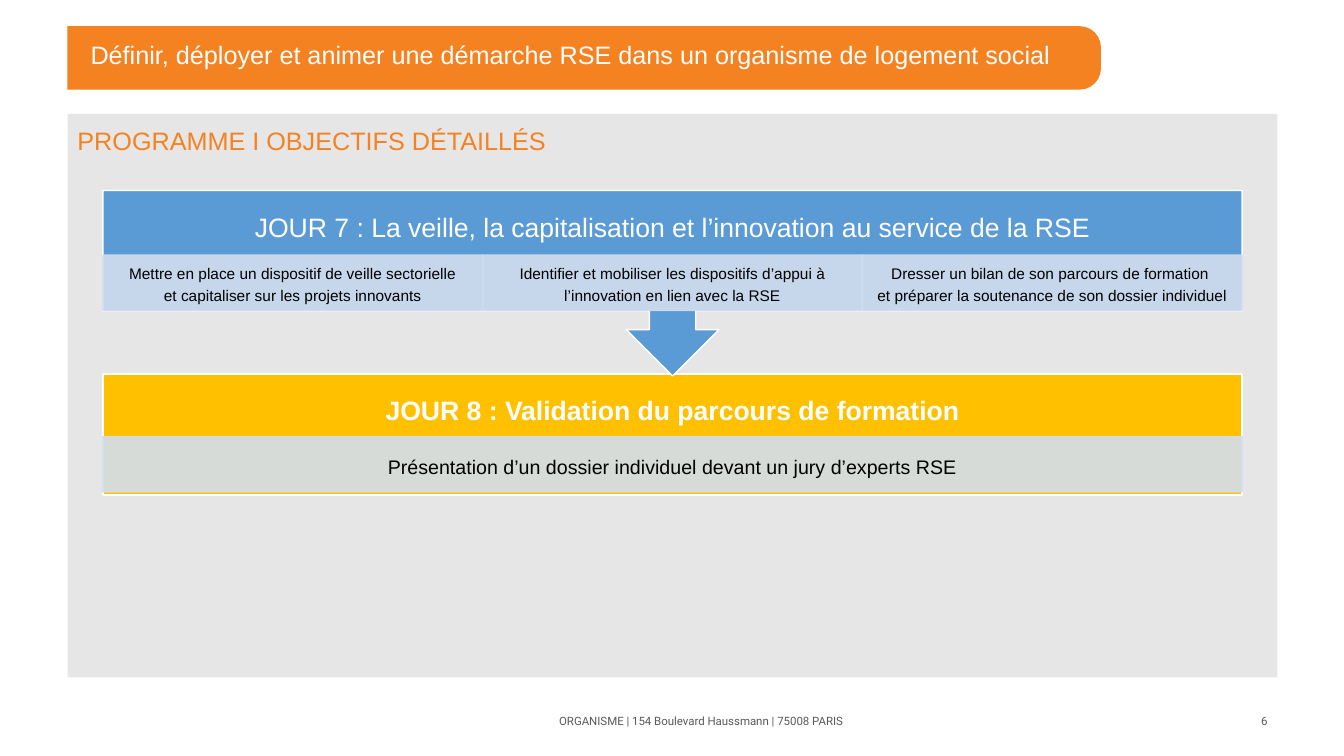
from lxml import etree
from pptx import Presentation
from pptx.dml.color import RGBColor
from pptx.enum import shapes, text
from pptx.oxml.ns import qn
from pptx.util import Inches, Pt

COLORS = {
    "orange": "F58221", "white": "FFFFFF", "gray": "E7E6E6", "footer": "58595B",
    "yellow": "FFC000", "blue": "5B9BD5", "pale": "D2DEEF", "black": "000000",
}
KIND = shapes.MSO_SHAPE
ALIGN = text.PP_ALIGN
BLOCK_LEFT, BLOCK_WIDTH = 1.02, 11.3
HEADING_HEIGHT, CELL_HEIGHT = 0.65, 0.55
DAY_7_TOP, DAY_8_TOP = 1.89, 3.71
DAY_7_GOALS = [
    "Mettre en place un dispositif de veille sectorielle\n"
    "et capitaliser sur les projets innovants",
    "Identifier et mobiliser les dispositifs d’appui à l’innovation en lien avec la RSE",
    "Dresser un bilan de son parcours de formation \n"
    "et préparer la soutenance de son dossier individuel",
]


def color(name):
    return RGBColor.from_string(COLORS[name])


def set_alpha(color_parent, percent):
    """Set the opacity of the solid colour inside a fill or line element."""
    rgb = color_parent.find(qn("a:solidFill")).find(qn("a:srgbClr"))
    etree.SubElement(rgb, qn("a:alpha")).set("val", str(percent * 1000))


def add_block(slide, kind, box, fill, line=None):
    shape = slide.shapes.add_shape(kind, *map(Inches, box))
    shape.shadow.inherit = False
    shape.fill.solid()
    shape.fill.fore_color.rgb = color(fill)
    if line:
        shape.line.color.rgb = color(line)
        shape.line.width = Pt(1)
    else:
        shape.line.fill.background()
    return shape


def write(shape, content, size, ink, align=ALIGN.CENTER, anchor=text.MSO_ANCHOR.MIDDLE,
          insets=(0.1, 0.05), spacing=1.2, font="Arial", bold=False):
    frame = shape.text_frame
    frame.word_wrap = True
    frame.vertical_anchor = anchor
    frame.margin_left = frame.margin_right = Inches(insets[0])
    frame.margin_top = frame.margin_bottom = Inches(insets[1])
    paragraph = frame.paragraphs[0]
    paragraph.alignment = align
    paragraph.line_spacing = spacing
    for number, line in enumerate(content.split("\n")):
        if number:
            paragraph.add_line_break()
        run = paragraph.add_run()
        run.text = line
        run.font.name = font
        run.font.size = Pt(size)
        run.font.bold = bold
        run.font.color.rgb = color(ink)


def add_label(slide, box, content, size, ink, **options):
    label = slide.shapes.add_textbox(*map(Inches, box))
    write(label, content, size, ink, **options)


def add_heading(slide, top, content, bold=False):
    add_label(slide, (BLOCK_LEFT, top, BLOCK_WIDTH, HEADING_HEIGHT), content, 19, "white",
              insets=(0.15, 0.15), bold=bold)


def add_cells(slide, top, contents, size, inset):
    """Share the block width equally between translucent cells."""
    width = BLOCK_WIDTH / len(contents)
    for column, content in enumerate(contents):
        box = (BLOCK_LEFT + column * width, top, width, CELL_HEIGHT)
        cell = add_block(slide, KIND.RECTANGLE, box, "pale", "pale")
        properties = cell.fill._xPr
        set_alpha(properties, 90)
        set_alpha(properties.find(qn("a:ln")), 90)
        write(cell, content, size, "black", insets=(inset, 0.02))


def add_footer(slide, box, content, align):
    add_label(slide, box, content, 8.2, "footer", align=align, spacing=1.0, font="Roboto")


def main():
    presentation = Presentation()
    presentation.slide_width, presentation.slide_height = Inches(13.33), Inches(7.5)
    slide = presentation.slides.add_slide(presentation.slide_layouts[6])

    # Title banner, squared off on the left by a white block
    banner = add_block(slide, KIND.ROUNDED_RECTANGLE, (0.09, 0.26, 10.83, 0.63), "orange")
    banner.adjustments[0] = 0.336
    add_block(slide, KIND.RECTANGLE, (0, 0.15, 0.67, 0.88), "white")
    add_label(slide, (0.8, 0.26, 9.9, 0.6),
              "Définir, déployer et animer une démarche RSE dans un organisme de logement social",
              18, "white", align=ALIGN.LEFT, spacing=0.9)

    # Programme panel
    panel = add_block(slide, KIND.RECTANGLE, (0.67, 1.13, 12, 5.59), "gray")
    write(panel, "PROGRAMME I OBJECTIFS DÉTAILLÉS", 18, "orange",
          align=ALIGN.LEFT, anchor=text.MSO_ANCHOR.TOP)

    # Day 8
    add_block(slide, KIND.RECTANGLE, (BLOCK_LEFT, DAY_8_TOP, BLOCK_WIDTH, 1.2),
              "yellow", "white")
    add_heading(slide, DAY_8_TOP, "JOUR 8 : Validation du parcours de formation", bold=True)
    add_cells(slide, 4.33, ["Présentation d’un dossier individuel devant un jury d’experts RSE"],
              14, 0.11)

    # Day 7, with its arrow pointing down to day 8
    callout = add_block(slide, KIND.UP_ARROW_CALLOUT,
                        (BLOCK_LEFT, DAY_7_TOP, BLOCK_WIDTH, 1.84), "blue", "white")
    callout.rotation = 180
    add_heading(slide, DAY_7_TOP,
                "JOUR 7 : La veille, la capitalisation et l’innovation au service de la RSE")
    add_cells(slide, 2.53, DAY_7_GOALS, 11, 0.09)

    # Footer
    add_footer(slide, (4.42, 6.95, 5.07, 0.4),
               "ORGANISME | 154 Boulevard Haussmann | 75008 PARIS", ALIGN.CENTER)
    add_footer(slide, (9.67, 6.95, 3, 0.4), "6", ALIGN.RIGHT)

    presentation.save("out.pptx")


if __name__ == "__main__":
    main()
